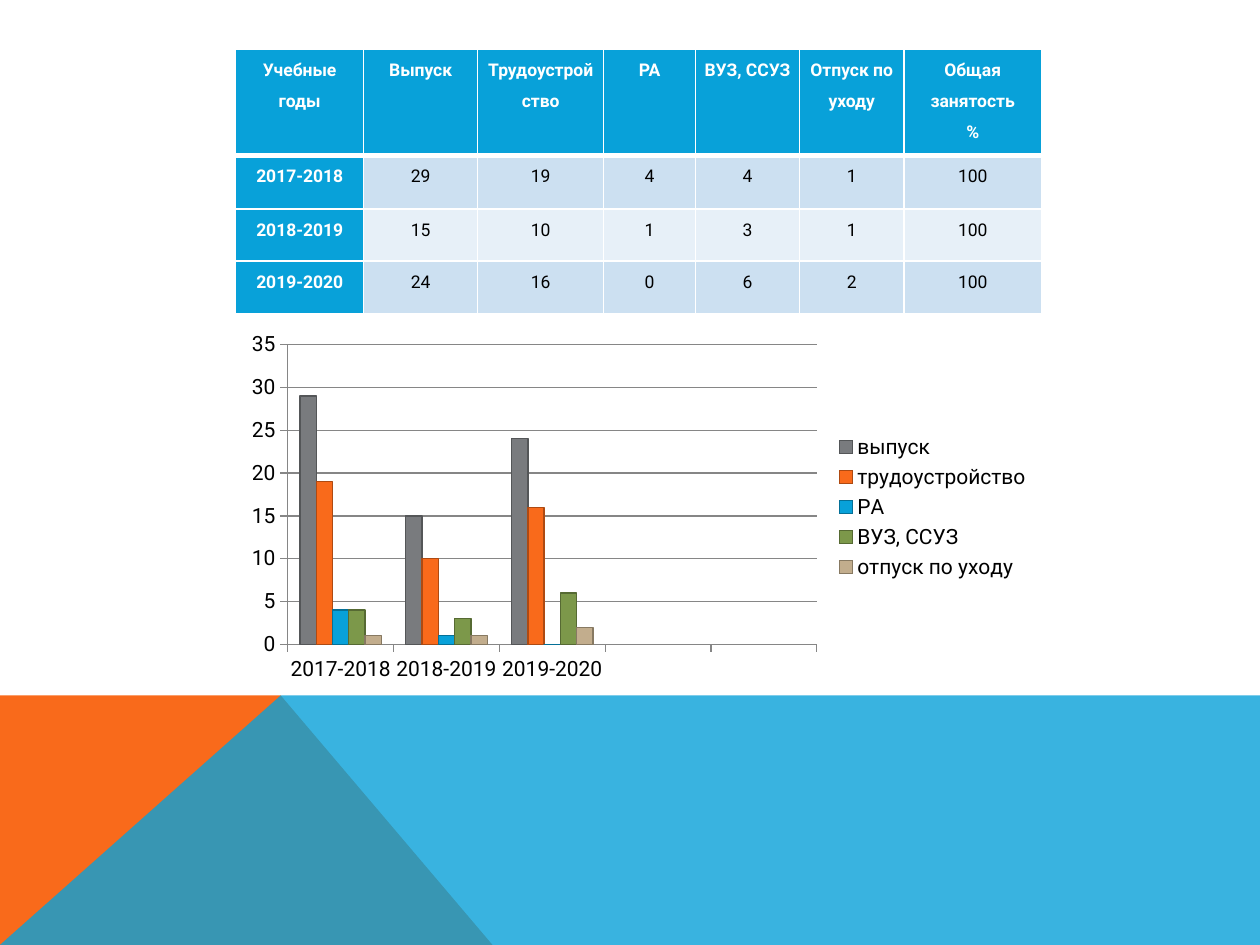
from lxml import etree
from pptx import Presentation
from pptx.chart.data import CategoryChartData
from pptx.dml.color import RGBColor
from pptx.enum.chart import XL_CHART_TYPE, XL_LEGEND_POSITION, XL_TICK_MARK
from pptx.enum.text import PP_ALIGN
from pptx.oxml.ns import qn
from pptx.util import Cm, Pt

COLUMNS = XL_CHART_TYPE.COLUMN_CLUSTERED
LEGEND_RIGHT = XL_LEGEND_POSITION.RIGHT
TICK_OUT = XL_TICK_MARK.OUTSIDE
CENTER = PP_ALIGN.CENTER

WIDTH, HEIGHT = 25.4, 19.05
BAND_TOP, PEAK = 14.02, 5.66
LEFT, CONTENT_WIDTH = 4.75, 16.28

HEADER = ["Учебные годы", "Выпуск", "Трудоустройство", "РА", "ВУЗ, ССУЗ",
          "Отпуск по уходу", "Общая\nзанятость\n%"]
YEARS = ["2017-2018", "2018-2019", "2019-2020"]
SERIES = [
    ("выпуск", [29, 15, 24], "797B7E"),
    ("трудоустройство", [19, 10, 16], "F96A1B"),
    ("РА", [4, 1, 0], "08A1D9"),
    ("ВУЗ, ССУЗ", [4, 3, 6], "7C984A"),
    ("отпуск по уходу", [1, 1, 2], "C2AD8D"),
]
EMPTY_YEARS = 2
TOTAL_PERCENT = 100
COL_WIDTHS = [2.58, 2.3, 2.54, 1.85, 2.1, 2.1, 2.78]
ROW_HEIGHTS = [2.13, 1.08, 1.05, 1.07]


def rgb(color):
    return RGBColor.from_string(color)


def darker(color, share=0.7):
    return "".join(f"{int(int(color[i:i + 2], 16) * share):02X}" for i in (0, 2, 4))


class SlideBuilder:
    font = "Roboto"
    accent, white, black, gray = "08A1D9", "FFFFFF", "000000", "868686"
    bands = ["CCE0F1", "E7F0F8"]

    def __init__(self, slide):
        self.slide = slide

    def style_font(self, font, size, color, bold=False):
        font.name, font.size, font.bold = self.font, Pt(size), bold
        font.color.rgb = rgb(color)

    def polygon(self, points, color, opacity=100):
        start, *rest = [(Cm(x), Cm(y)) for x, y in points]
        builder = self.slide.shapes.build_freeform(*start)
        builder.add_line_segments(rest, close=True)
        sp = builder.convert_to_shape()
        sp.shadow.inherit = False
        sp.fill.solid()
        sp.fill.fore_color.rgb = rgb(color)
        sp.line.fill.background()
        if opacity < 100:
            clr = sp.fill._xPr.find(".//" + qn("a:srgbClr"))
            etree.SubElement(clr, qn("a:alpha"), val=str(opacity * 1000))

    def borders(self, cell, widths):
        """Draw white cell borders; widths are points for left, right, top, bottom."""
        tc_pr = cell._tc.get_or_add_tcPr()
        for side, width in zip("LRTB", widths):
            ln = etree.SubElement(tc_pr, qn(f"a:ln{side}"), w=str(Pt(width)))
            fill = etree.SubElement(ln, qn("a:solidFill"))
            etree.SubElement(fill, qn("a:srgbClr"), val=self.white)

    def cell(self, cell, text, row, col):
        cell.margin_left = cell.margin_right = Cm(0.13)
        cell.margin_top, cell.margin_bottom = Cm(0.02), 0
        self.borders(cell, (1, 1, 3 if row == 1 else 1, 3 if row == 0 else 1))
        heading = row == 0 or col == 0
        cell.fill.solid()
        cell.fill.fore_color.rgb = rgb(self.accent if heading else self.bands[(row - 1) % 2])
        cell.text_frame.text = text
        for p in cell.text_frame.paragraphs:
            p.alignment, p.line_spacing = CENTER, 1.5
            for r in p.runs:
                self.style_font(r.font, 10, self.white if heading else self.black, heading)

    def table(self, x, y, rows, widths, heights):
        frame = self.slide.shapes.add_table(len(rows), len(widths), Cm(x), Cm(y),
                                            Cm(sum(widths)), Cm(sum(heights)))
        table = frame.table
        for column, width in zip(table.columns, widths):
            column.width = Cm(width)
        for row, height in zip(table.rows, heights):
            row.height = Cm(height)
        for i, values in enumerate(rows):
            for j, value in enumerate(values):
                self.cell(table.cell(i, j), str(value), i, j)

    def column_chart(self, x, y, w, h, categories, series):
        data = CategoryChartData()
        data.categories = categories
        for name, values, _ in series:
            data.add_series(name, values)
        chart = self.slide.shapes.add_chart(COLUMNS, Cm(x), Cm(y), Cm(w), Cm(h), data).chart
        self.style_font(chart.font, 12, self.black)
        chart.has_title = False
        chart.has_legend = True
        chart.legend.position = LEGEND_RIGHT
        chart.legend.include_in_layout = False
        self.style_font(chart.legend.font, 12, self.black)
        for axis in (chart.category_axis, chart.value_axis):
            axis.major_tick_mark = TICK_OUT
            axis.format.line.color.rgb = rgb(self.gray)
            self.style_font(axis.tick_labels.font, 12, self.black)
        chart.value_axis.has_major_gridlines = True
        chart.value_axis.major_gridlines.format.line.color.rgb = rgb(self.gray)
        plot = chart.plots[0]
        plot.gap_width, plot.overlap, plot.vary_by_categories = 150, 0, False
        for bars, (_, _, color) in zip(plot.series, series):
            bars.format.fill.solid()
            bars.format.fill.fore_color.rgb = rgb(color)
            bars.format.line.color.rgb = rgb(darker(color))
            bars.format.line.width = Pt(0.75)


def main():
    prs = Presentation()
    prs.slide_width, prs.slide_height = Cm(WIDTH), Cm(HEIGHT)
    s = SlideBuilder(prs.slides.add_slide(prs.slide_layouts[6]))

    s.polygon([(0, HEIGHT), (0, BAND_TOP), (PEAK, BAND_TOP), (9.93, HEIGHT)], "F96A1B")
    s.polygon([(0, HEIGHT), (PEAK, BAND_TOP), (WIDTH, BAND_TOP), (WIDTH, HEIGHT)],
              s.accent, opacity=80)

    by_year = zip(*(values for _, values, _ in SERIES))
    rows = [HEADER] + [[year, *values, TOTAL_PERCENT] for year, values in zip(YEARS, by_year)]
    s.table(LEFT, 1, rows, COL_WIDTHS, ROW_HEIGHTS)

    padded = [(name, values + [None] * EMPTY_YEARS, color) for name, values, color in SERIES]
    s.column_chart(LEFT, 6.55, CONTENT_WIDTH, 7.34, YEARS + [""] * EMPTY_YEARS, padded)

    prs.save("out.pptx")


if __name__ == "__main__":
    main()
